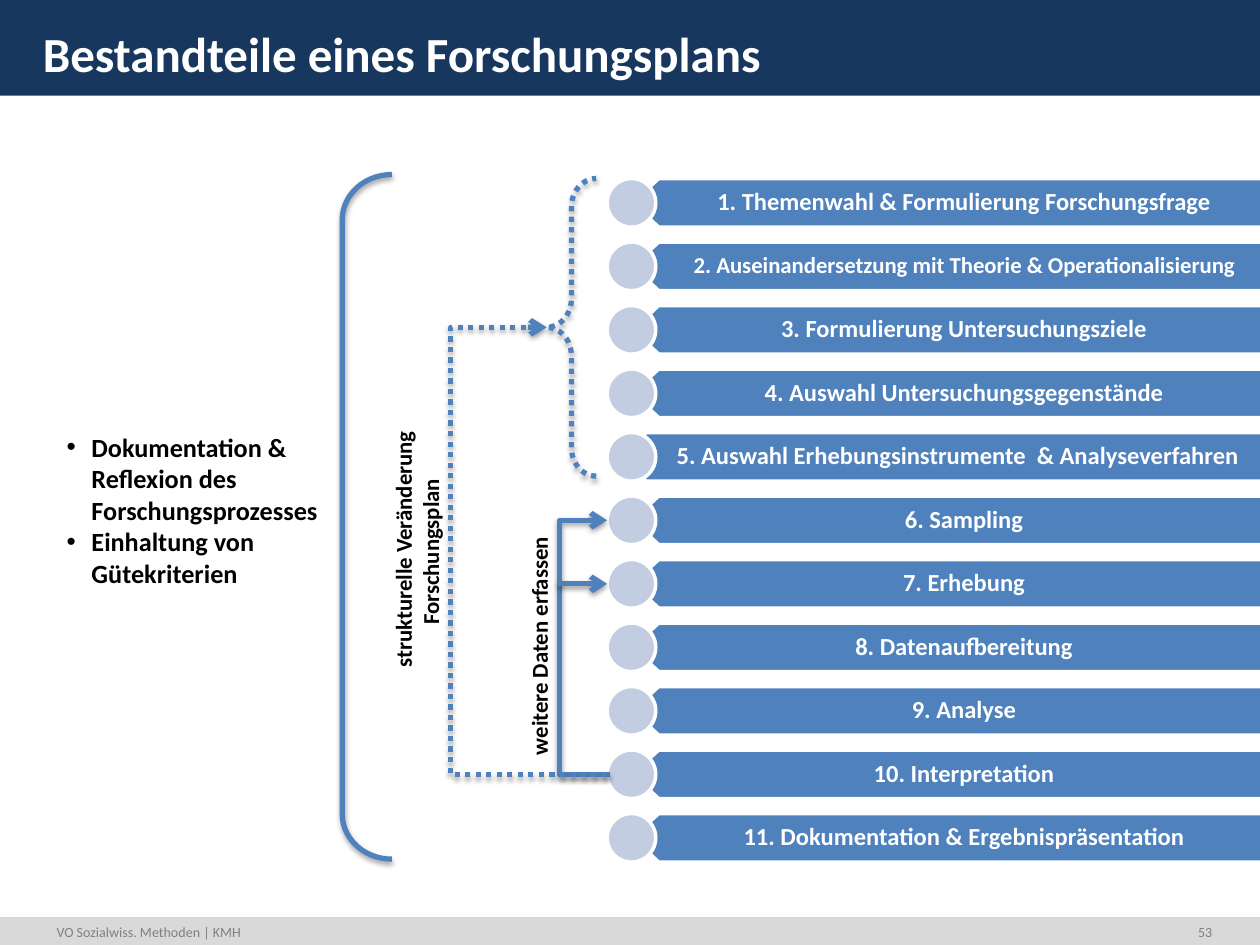
from lxml import etree
from pptx import Presentation
from pptx import util as u
from pptx.dml.color import RGBColor
from pptx.enum import dml, shapes, text
from pptx.oxml import parse_xml
from pptx.oxml.ns import nsdecls, qn

STEPS = [
    "Themenwahl & Formulierung Forschungsfrage",
    "Auseinandersetzung mit Theorie & Operationalisierung",
    "Formulierung Untersuchungsziele",
    "Auswahl Untersuchungsgegenstände",
    "Auswahl Erhebungsinstrumente  & Analyseverfahren",
    "Sampling",
    "Erhebung",
    "Datenaufbereitung",
    "Analyse",
    "Interpretation",
    "Dokumentation & Ergebnispräsentation",
]
QUALITY = [
    "Dokumentation & Reflexion des Forschungsprozesses",
    "Einhaltung von Gütekriterien",
]
FIRST_TOP, PITCH, ROW_HEIGHT = 3.6, 1.28, 0.98
CIRCLE_LEFT, BAR_RIGHT, TIP = 12.24, 25.7, 0.53


def color(value):
    return RGBColor.from_string(value)


def row_center(number):
    return FIRST_TOP + ROW_HEIGHT / 2 + PITCH * (number - 1)


class SlideBuilder:
    font = "Calibri"
    blue = "4F81BD"
    white = "FFFFFF"
    black = "000000"

    def __init__(self, slide):
        self.slide = slide
        self.shapes = slide.shapes

    def add_words(self, paragraph, content, size, hue, bold=True):
        for index, line in enumerate(content.split("\n")):
            if index:
                paragraph.add_line_break()
            run = paragraph.add_run()
            run.text = line
            run.font.name = self.font
            run.font.size = u.Pt(size)
            run.font.bold = bold
            run.font.color.rgb = color(hue)

    def place(self, shape, left, top, width, height):
        shape.left, shape.top = u.Cm(left), u.Cm(top)
        shape.width, shape.height = u.Cm(width), u.Cm(height)
        self.shapes._spTree.append(shape._element)

    def paint(self, shape, fill, outline=None):
        shape.shadow.inherit = False
        shape.fill.solid()
        shape.fill.fore_color.rgb = color(fill)
        if outline:
            shape.line.color.rgb = color(outline)
            shape.line.width = u.Pt(2)
        else:
            shape.line.fill.background()

    def preset(self, kind, left, top, width, height):
        return self.shapes.add_shape(kind, u.Cm(left), u.Cm(top), u.Cm(width), u.Cm(height))

    def band(self, top, height, fill):
        self.paint(self.preset(shapes.MSO_SHAPE.RECTANGLE, 0, top, 25.4, height), fill)

    def title(self, content):
        title = self.shapes.title
        self.place(title, 0.61, 0.25, 23.98, 1.27)
        frame = title.text_frame
        frame.auto_size = text.MSO_AUTO_SIZE.NONE
        frame.vertical_anchor = text.MSO_ANCHOR.TOP
        frame.margin_top = u.Cm(0.22)
        frame.paragraphs[0].alignment = text.PP_ALIGN.LEFT
        self.add_words(frame.paragraphs[0], content, 28, self.white)

    def bullets(self, items, left, top, width, height):
        body = self.slide.placeholders[1]
        self.place(body, left, top, width, height)
        frame = body.text_frame
        frame.auto_size = text.MSO_AUTO_SIZE.NONE
        for index, item in enumerate(items):
            paragraph = frame.add_paragraph() if index else frame.paragraphs[0]
            paragraph.space_before = u.Pt(0)
            properties = paragraph._p.get_or_add_pPr()
            properties.set("marL", str(u.Cm(0.5)))
            properties.set("indent", str(u.Cm(-0.5)))
            etree.SubElement(properties, qn("a:buFont")).set("typeface", "Arial")
            etree.SubElement(properties, qn("a:buChar")).set("char", "•")
            self.add_words(paragraph, item, 15, self.black)

    def label(self, content, left, top, width, height, size, hue, align, bold=True, rotation=0):
        box = self.shapes.add_textbox(u.Cm(left), u.Cm(top), u.Cm(width), u.Cm(height))
        box.rotation = rotation
        frame = box.text_frame
        frame.word_wrap = True
        frame.auto_size = text.MSO_AUTO_SIZE.SHAPE_TO_FIT_TEXT
        if rotation:
            frame.vertical_anchor = text.MSO_ANCHOR.MIDDLE
        frame.paragraphs[0].alignment = align
        self.add_words(frame.paragraphs[0], content, size, hue, bold)

    def step(self, number, content, left, size):
        middle = row_center(number)
        top, bottom = middle - ROW_HEIGHT / 2, middle + ROW_HEIGHT / 2
        corners = [(left + TIP, bottom), (left, middle), (left + TIP, top), (BAR_RIGHT, top)]
        builder = self.shapes.build_freeform(u.Cm(BAR_RIGHT), u.Cm(bottom))
        builder.add_line_segments([(u.Cm(x), u.Cm(y)) for x, y in corners])
        bar = builder.convert_to_shape()
        self.paint(bar, self.blue, self.white)
        frame = bar.text_frame
        frame.word_wrap = True
        frame.vertical_anchor = text.MSO_ANCHOR.MIDDLE
        frame.margin_left, frame.margin_right = u.Cm(0.69), u.Cm(0.27)
        frame.margin_top = frame.margin_bottom = u.Cm(0.14)
        paragraph = frame.paragraphs[0]
        paragraph.alignment = text.PP_ALIGN.CENTER
        paragraph.line_spacing = 0.9
        self.add_words(paragraph, f"{number}. {content}", size, self.white)
        circle = self.preset(shapes.MSO_SHAPE.OVAL, CIRCLE_LEFT, top, ROW_HEIGHT, ROW_HEIGHT)
        self.paint(circle, "C2CDE1", self.white)

    def stroke(self, shape, dotted):
        shape.line.color.rgb = color(self.blue)
        shape.line.width = u.Pt(3)
        if dotted:
            shape.line.dash_style = dml.MSO_LINE.ROUND_DOT
        shape._element.spPr.append(parse_xml(
            f'<a:effectLst {nsdecls("a")}><a:outerShdw blurRad="40000" dist="20000" '
            'dir="5400000" rotWithShape="0"><a:srgbClr val="000000"><a:alpha val="38000"/>'
            "</a:srgbClr></a:outerShdw></a:effectLst>"))

    def bracket(self, kind, left, top, width, height, adjustments, dotted=False):
        shape = self.preset(kind, left, top, width, height)
        for index, value in enumerate(adjustments):
            shape.adjustments[index] = value
        shape.fill.background()
        self.stroke(shape, dotted)

    def arrow(self, start, end, bend=None, dotted=False):
        kind = shapes.MSO_CONNECTOR.STRAIGHT if bend is None else shapes.MSO_CONNECTOR.ELBOW
        connector = self.shapes.add_connector(kind, *[u.Cm(value) for value in (*start, *end)])
        properties = connector._element.spPr
        if bend is not None:
            ratio = (start[0] - bend) / (start[0] - end[0])
            guides = properties.find(qn("a:prstGeom")).find(qn("a:avLst"))
            guide = etree.SubElement(guides, qn("a:gd"))
            guide.set("name", "adj1")
            guide.set("fmla", f"val {round(ratio * 100000)}")
        self.stroke(connector, dotted)
        etree.SubElement(properties.find(qn("a:ln")), qn("a:tailEnd")).set("type", "arrow")


def main():
    presentation = Presentation()
    presentation.slide_width, presentation.slide_height = u.Cm(25.4), u.Cm(19.05)
    page = SlideBuilder(presentation.slides.add_slide(presentation.slide_layouts[1]))
    left, center, right = text.PP_ALIGN.LEFT, text.PP_ALIGN.CENTER, text.PP_ALIGN.RIGHT

    page.band(18.49, 0.56, "D9D9D9")
    page.band(0, 1.93, "17375E")
    page.label("VO Sozialwiss. Methoden | KMH", 0.89, 18.49, 7.6, 0.6, 8, "808080", left, False)
    page.label("53", 23.62, 18.49, 1.07, 0.6, 8, "808080", right, False)
    page.title("Bestandteile eines Forschungsplans")

    for number, content in enumerate(STEPS, 1):
        page.step(number, content, 12.5 if number == 5 else 12.75, 13 if number == 2 else 14)

    source = row_center(10)
    page.arrow((12.29, source), (CIRCLE_LEFT, row_center(6)), bend=11.28)
    page.arrow((CIRCLE_LEFT, source), (11.02, 6.6), bend=9.09, dotted=True)
    page.bracket(shapes.MSO_SHAPE.LEFT_BRACE, 11.02, 3.6, 1, 6, [0.576, 0.5], dotted=True)
    page.bracket(shapes.MSO_SHAPE.LEFT_BRACKET, 6.9, 3.52, 1, 13.8, [0.913])
    page.arrow((11.25, row_center(7)), (CIRCLE_LEFT, row_center(7)))

    page.label("weitere Daten erfassen", 8.28, 12.62, 5.16, 0.81, 13, page.black, center, rotation=270)
    page.label(" strukturelle Veränderung\nForschungsplan", 3.91, 10.44, 8.97, 1.37,
               13, page.black, center, rotation=270)
    page.bullets(QUALITY, 1.09, 8.56, 5.59, 3.45)
    presentation.save("out.pptx")


if __name__ == "__main__":
    main()
